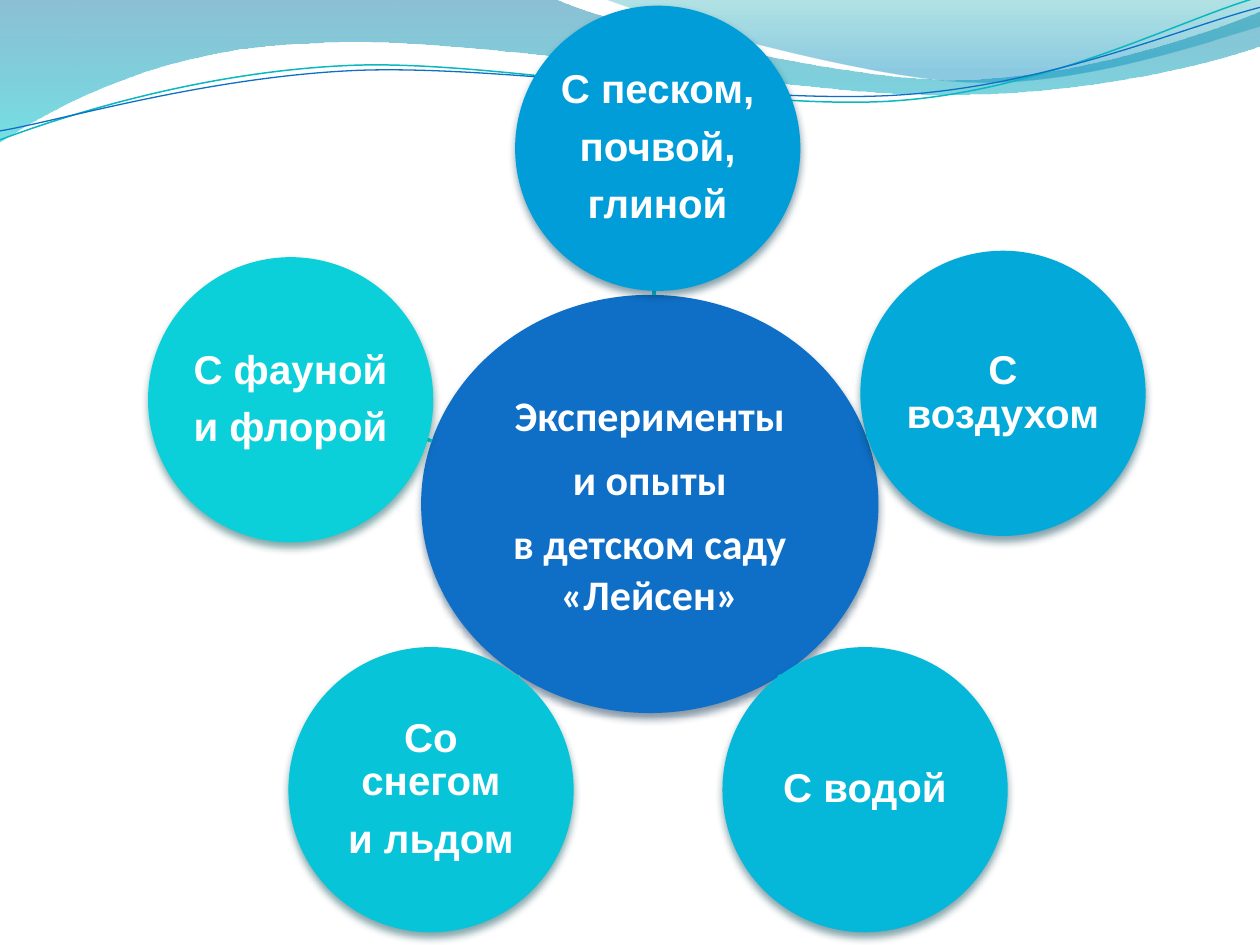
from dataclasses import dataclass

from lxml import etree
from pptx import Presentation
from pptx.dml.color import RGBColor
from pptx.enum.shapes import MSO_CONNECTOR, MSO_SHAPE
from pptx.enum.text import MSO_ANCHOR, PP_ALIGN
from pptx.oxml.ns import qn
from pptx.util import Cm, Pt

OVAL = MSO_SHAPE.OVAL
STRAIGHT = MSO_CONNECTOR.STRAIGHT
MIDDLE = MSO_ANCHOR.MIDDLE
CENTER = PP_ALIGN.CENTER


@dataclass(frozen=True)
class Theme:
    text: str = "FFFFFF"
    hub: str = "0F6FC6"
    hub_shadow: str = "042747"
    spoke: str = "0BD0D9"
    spoke_width: float = 2
    hub_font: str = "Calibri"
    hub_size: int = 24
    topic_font: str = "Arial"
    topic_size: int = 23
    space_after: int = 8


THEME = Theme()
INSET = 0.05
TOPIC_DIAMETER = 5.75

# Outlines in cm: a pair is a straight step, six numbers are a Bezier step.
# Each gradient stop is position, colour, opacity in percent.
WAVES = [
    ([(0, 0), (11.18, -0.03),
      (12.09, 0.43, 16.87, 1.6, 19.25, 1.6),
      (21.67, 1.6, 24.33, 0.66, 25.4, 0.23),
      (25.43, 0.91),
      (24.97, 1.12, 22.1, 1.93, 18.95, 1.91),
      (15.8, 1.91, 9.7, 0.71, 6.53, 0.86),
      (3.28, 0.91, 1.17, 2.11, -0.03, 2.87)],
     [(0, "0074A1", 45), (1, "00C6CF", 55)]),
    ([(12.17, -0.03),
      (12.93, 0.28, 17.32, 1.57, 19.53, 1.65),
      (21.74, 1.75, 24.41, 0.81, 25.4, 0.53),
      (25.4, 0)],
     [(0, "00A1A9", 30), (0.8, "008BBF", 45)]),
]
RIPPLES = [
    ([(0, 2.82),
      (1.22, 2.36, 4.01, 1.45, 7.04, 1.32),
      (10.03, 1.19, 15.06, 2.26, 18.11, 2.03),
      (21.16, 1.8, 23.83, 0.38, 25.35, -0.05)], "0AB8BF", 0.85),
    ([(0, 2.64),
      (1.19, 2.44, 4.17, 1.55, 7.19, 1.42),
      (10.24, 1.3, 15.16, 2.13, 18.21, 1.91),
      (21.23, 1.7, 23.9, 0.53, 25.4, 0.15)], "0F6FC6", 0.75),
]

HUB_CENTER = (13.1, 10.16)
HUB_SIZE = (9.22, 8.43)
HUB_TEXT = ["Эксперименты", "и опыты", "в детском саду «Лейсен»"]

# Circle centre, spoke ends, fill, shadow, paragraphs
TOPICS = [
    ((13.26, 2.99), (13.18, 5.94, 13.18, 5.87), "009DD9", "00374C",
     ["С песком,", "почвой,", "глиной"]),
    ((20.22, 7.93), (17.45, 8.79, 17.48, 8.79), "03AAD9", "003C4D",
     ["С воздухом"]),
    ((17.44, 15.92), (15.72, 13.64, 15.7, 13.61), "05B7D9", "00424E",
     ["С водой"]),
    ((8.69, 15.92), (10.44, 13.61, 10.44, 13.64), "08C4D9", "01464E",
     ["Со снегом", "и льдом"]),
    ((5.86, 8.06), (8.71, 8.89, 8.61, 8.86), "0BD0D9", "024B4E",
     ["С фауной", "и флорой"]),
]


def rgb(value):
    return RGBColor.from_string(value)


def set_all(target, values):
    for name, value in values.items():
        setattr(target, name, value)


def add_outline(s, steps, close):
    """Draw all points as straight steps, then join Bezier triples to curves."""
    points = [(Cm(step[i]), Cm(step[i + 1]))
              for step in steps for i in range(0, len(step), 2)]
    builder = s.shapes.build_freeform(*points[0])
    builder.add_line_segments(points[1:], close=close)
    sp = builder.convert_to_shape()
    sp.shadow.inherit = False
    nodes = iter(list(sp._element.iter(qn("a:lnTo"))))
    for step in steps[1:]:
        node = next(nodes)
        if len(step) == 6:
            curve = etree.Element(qn("a:cubicBezTo"))
            node.addprevious(curve)
            for old in (node, next(nodes), next(nodes)):
                curve.append(old[0])
                old.getparent().remove(old)
    return sp


def add_wave(s, steps, stops):
    sp = add_outline(s, steps, True)
    sp.line.fill.background()
    sp.fill.gradient()
    sp.fill.gradient_angle = 270
    for stop, (position, color, _) in zip(sp.fill.gradient_stops, stops):
        stop.position = position
        stop.color.rgb = rgb(color)
    colors = sp._element.spPr.iter(qn("a:srgbClr"))
    for node, (_, _, opacity) in zip(list(colors), stops):
        etree.SubElement(node, qn("a:alpha"), val=str(opacity * 1000))


def add_ripple(s, steps, color, width):
    sp = add_outline(s, steps, False)
    sp.fill.background()
    sp.line.color.rgb = rgb(color)
    sp.line.width = Pt(width)


def add_spoke(s, ends):
    line = s.shapes.add_connector(STRAIGHT, *(Cm(v) for v in ends))
    line.line.color.rgb = rgb(THEME.spoke)
    line.line.width = Pt(THEME.spoke_width)
    etree.SubElement(line._element.spPr, qn("a:effectLst"))


def add_shadow(sp, color):
    sp.shadow.inherit = False
    effects = sp._element.spPr.find(qn("a:effectLst"))
    shadow = etree.SubElement(effects, qn("a:outerShdw"), blurRad=str(Pt(4.5)),
                              dist=str(Pt(3)), dir="5400000", rotWithShape="0")
    node = etree.SubElement(shadow, qn("a:srgbClr"), val=color)
    etree.SubElement(node, qn("a:alpha"), val="48000")


def add_circle(s, center, size, fill, shadow, lines, font, spacing):
    (x, y), (w, h) = center, size
    sp = s.shapes.add_shape(OVAL, Cm(x - w / 2), Cm(y - h / 2), Cm(w), Cm(h))
    sp.fill.solid()
    sp.fill.fore_color.rgb = rgb(fill)
    sp.line.fill.background()
    add_shadow(sp, shadow)
    tf = sp.text_frame
    set_all(tf, {"word_wrap": True, "vertical_anchor": MIDDLE,
                 "margin_left": Cm(INSET), "margin_right": Cm(INSET),
                 "margin_top": Cm(INSET), "margin_bottom": Cm(INSET)})
    for i, text in enumerate(lines):
        p = tf.add_paragraph() if i else tf.paragraphs[0]
        set_all(p, {"alignment": CENTER, "line_spacing": spacing,
                    "space_after": Pt(THEME.space_after)})
        r = p.add_run()
        r.text = text
        set_all(r.font, font)
        r.font.color.rgb = rgb(THEME.text)


def main():
    prs = Presentation()
    prs.slide_width, prs.slide_height = Cm(25.4), Cm(19.05)
    s = prs.slides.add_slide(prs.slide_layouts[6])

    # Wavy header
    for steps, stops in WAVES:
        add_wave(s, steps, stops)
    for steps, color, width in RIPPLES:
        add_ripple(s, steps, color, width)

    # Hub
    hub_font = {"name": THEME.hub_font, "size": Pt(THEME.hub_size), "bold": True}
    add_circle(s, HUB_CENTER, HUB_SIZE, THEME.hub, THEME.hub_shadow,
               HUB_TEXT, hub_font, 1.0)

    # Topics around the hub
    topic_font = {"name": THEME.topic_font, "size": Pt(THEME.topic_size), "bold": True}
    for center, ends, fill, shadow, lines in TOPICS:
        add_spoke(s, ends)
        add_circle(s, center, (TOPIC_DIAMETER, TOPIC_DIAMETER), fill, shadow,
                   lines, topic_font, 0.9)

    prs.save("out.pptx")


if __name__ == "__main__":
    main()
